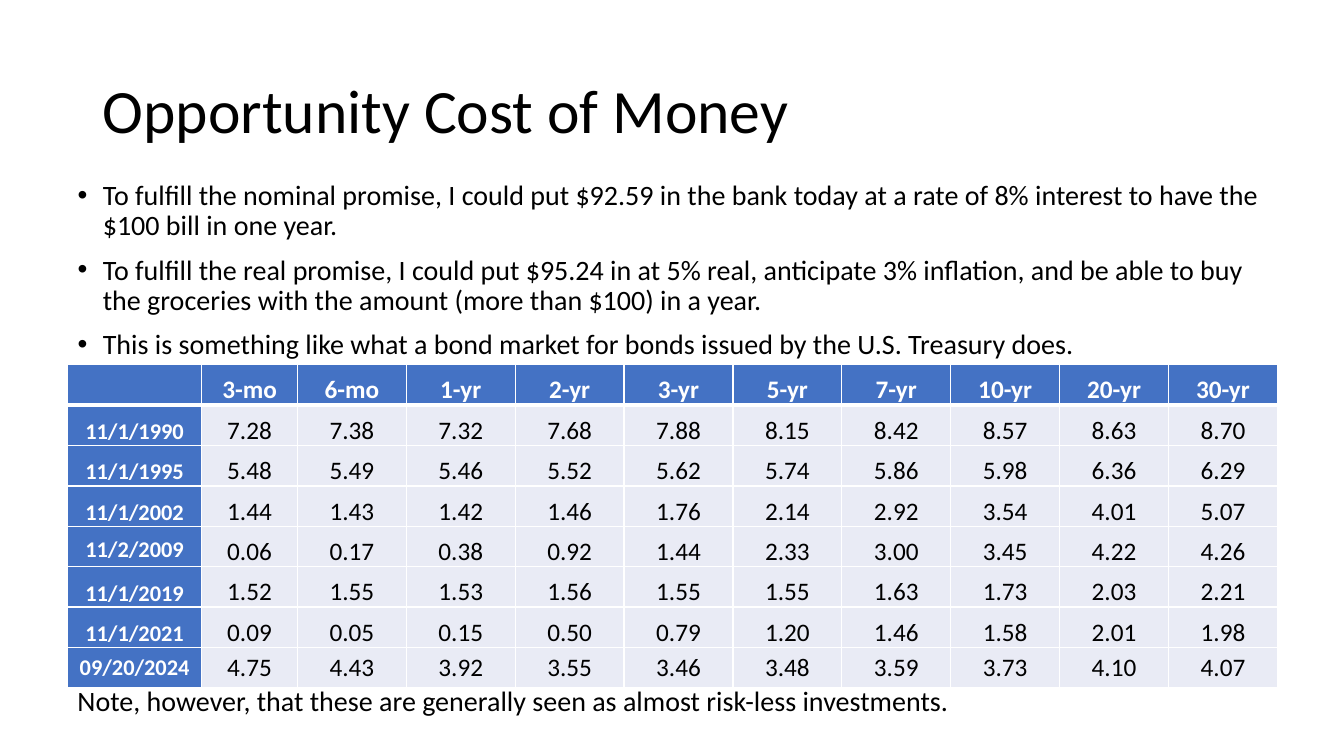
from lxml import etree
from pptx import Presentation
from pptx.dml.color import RGBColor
from pptx.enum.text import MSO_ANCHOR, MSO_AUTO_SIZE, PP_ALIGN
from pptx.oxml.ns import qn
from pptx.util import Pt

PX = 9144  # 100 px to the inch
LEFT, CENTER = PP_ALIGN.LEFT, PP_ALIGN.CENTER
TOP, MIDDLE, BOTTOM = MSO_ANCHOR.TOP, MSO_ANCHOR.MIDDLE, MSO_ANCHOR.BOTTOM
NO_AUTOFIT = MSO_AUTO_SIZE.NONE

THEME = {
    "font": "Calibri",
    "text": "000000", "header_text": "FFFFFF", "border": "FFFFFF",
    "header_fill": "4472C4", "cell_fill": "E9EBF5",
    "title_size": 44, "body_size": 20, "cell_size": 18, "date_size": 16,
}

TITLE = "Opportunity Cost of Money"
BULLETS = [
    "To fulfill the nominal promise, I could put $92.59 in the bank today at a rate of 8% interest "
    "to have the $100 bill in one year.",
    "To fulfill the real promise, I could put $95.24 in at 5% real, anticipate 3% inflation, "
    "and be able to buy the groceries with the amount (more than $100) in a year.",
    "This is something like what a bond market for bonds issued by the U.S. Treasury does.",
]
NOTE = "Note, however, that these are generally seen as almost risk-less investments."
MATURITIES = ["", "3-mo", "6-mo", "1-yr", "2-yr", "3-yr", "5-yr", "7-yr", "10-yr", "20-yr", "30-yr"]
YIELDS = {
    "11/1/1990": [7.28, 7.38, 7.32, 7.68, 7.88, 8.15, 8.42, 8.57, 8.63, 8.70],
    "11/1/1995": [5.48, 5.49, 5.46, 5.52, 5.62, 5.74, 5.86, 5.98, 6.36, 6.29],
    "11/1/2002": [1.44, 1.43, 1.42, 1.46, 1.76, 2.14, 2.92, 3.54, 4.01, 5.07],
    "11/2/2009": [0.06, 0.17, 0.38, 0.92, 1.44, 2.33, 3.00, 3.45, 4.22, 4.26],
    "11/1/2019": [1.52, 1.55, 1.53, 1.56, 1.55, 1.55, 1.63, 1.73, 2.03, 2.21],
    "11/1/2021": [0.09, 0.05, 0.15, 0.50, 0.79, 1.20, 1.46, 1.58, 2.01, 1.98],
    "09/20/2024": [4.75, 4.43, 3.92, 3.55, 3.46, 3.48, 3.59, 3.73, 4.10, 4.07],
}
# Vertical anchors of each row: date cell, value cells
ROW_ANCHORS = [(MIDDLE, MIDDLE)] + [(BOTTOM, BOTTOM)] * 3 + [(TOP, TOP)] + [(BOTTOM, TOP)] * 2 + [(MIDDLE, MIDDLE)]


def format_text(text_frame, size, color, align=LEFT, bold=False):
    for paragraph in text_frame.paragraphs:
        paragraph.alignment = align
        for run in paragraph.runs:
            run.font.name = THEME["font"]
            run.font.size = Pt(size)
            run.font.bold = bold
            run.font.color.rgb = RGBColor.from_string(color)


def set_borders(cell, top_width, bottom_width):
    properties = cell._tc.get_or_add_tcPr()
    widths = {"a:lnL": 1, "a:lnR": 1, "a:lnT": top_width, "a:lnB": bottom_width}
    for position, (tag, width) in enumerate(widths.items()):
        line = etree.Element(qn(tag), w=str(Pt(width)))
        fill = etree.SubElement(line, qn("a:solidFill"))
        etree.SubElement(fill, qn("a:srgbClr"), val=THEME["border"])
        properties.insert(position, line)


presentation = Presentation()
presentation.slide_width, presentation.slide_height = 1333 * PX, 750 * PX
slide = presentation.slides.add_slide(presentation.slide_layouts[1])

# Title
title = slide.shapes.title
title.left, title.top, title.width, title.height = 92 * PX, 40 * PX, 1150 * PX, 145 * PX
title.text_frame.text = TITLE
title.text_frame.auto_size = NO_AUTOFIT
title.text_frame.vertical_anchor = MIDDLE
title.text_frame.paragraphs[0].line_spacing = 0.9
format_text(title.text_frame, THEME["title_size"], THEME["text"])

# Bullet list
body = slide.placeholders[1]
body.left, body.top, body.width, body.height = 67 * PX, 175 * PX, 1200 * PX, 200 * PX
body.text_frame.text = "\n".join(BULLETS)
body.text_frame.auto_size = NO_AUTOFIT
format_text(body.text_frame, THEME["body_size"], THEME["text"])
for paragraph in body.text_frame.paragraphs:
    paragraph.line_spacing = 0.9
    paragraph.space_before = Pt(10)
    indent = paragraph._p.get_or_add_pPr()
    indent.set("marL", str(25 * PX))
    indent.set("indent", str(-25 * PX))

# Note below the table
note = slide.shapes.add_textbox(67 * PX, 673 * PX, 1200 * PX, 44 * PX)
note.text_frame.word_wrap = True
note.text_frame.text = NOTE
format_text(note.text_frame, THEME["body_size"], THEME["text"])

# Yield table
rows = [MATURITIES] + [[date] + [f"{value:.2f}" for value in values] for date, values in YIELDS.items()]
table = slide.shapes.add_table(len(rows), len(MATURITIES), 67 * PX, 362 * PX, 1200 * PX, 320 * PX).table
table.first_col = True
table.horz_banding = False
for column, width in zip(table.columns, [133, 95] + [108] * 9):
    column.width = width * PX

for row_index, (row, anchors) in enumerate(zip(rows, ROW_ANCHORS)):
    table.rows[row_index].height = 39 * PX
    for column_index, text in enumerate(row):
        cell = table.cell(row_index, column_index)
        is_date = column_index == 0
        is_header = row_index == 0 or is_date
        cell.text_frame.text = text
        cell.vertical_anchor = anchors[0 if is_date else 1]
        if row_index < len(rows) - 1:
            cell.margin_top, cell.margin_bottom = 10 * PX, 0
        cell.fill.solid()
        cell.fill.fore_color.rgb = RGBColor.from_string(THEME["header_fill" if is_header else "cell_fill"])
        set_borders(cell, 3 if row_index == 1 else 1, 3 if row_index == 0 else 1)
        format_text(cell.text_frame, THEME["date_size" if is_date else "cell_size"],
                    THEME["header_text" if is_header else "text"], CENTER, is_header)

presentation.save("out.pptx")
